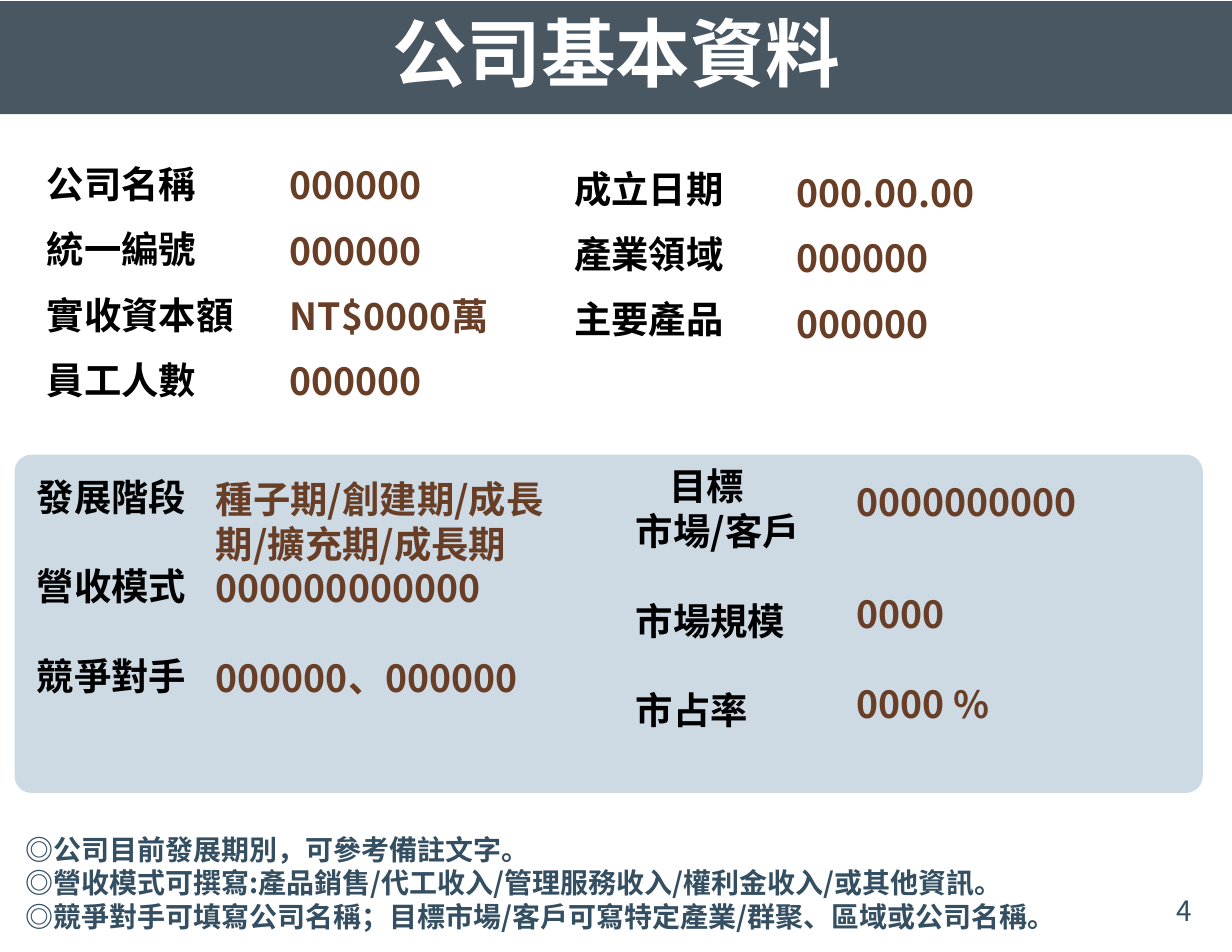
from dataclasses import dataclass

import pptx
import pptx.dml.color
import pptx.enum.shapes
import pptx.enum.text
import pptx.util
from lxml import etree
from pptx.oxml.ns import qn

Inches = pptx.util.Inches
Pt = pptx.util.Pt
RGBColor = pptx.dml.color.RGBColor
PP_ALIGN = pptx.enum.text.PP_ALIGN
MSO_ANCHOR = pptx.enum.text.MSO_ANCHOR

WHITE = RGBColor(0xFF, 0xFF, 0xFF)
BLACK = RGBColor(0x00, 0x00, 0x00)
SLATE = RGBColor(0x49, 0x57, 0x62)
PANEL_BLUE = RGBColor(0x72, 0x97, 0xB4)
BROWN = RGBColor(0x69, 0x3E, 0x26)
NAVY = RGBColor(0x34, 0x4E, 0x62)

FONT = "Noto Sans CJK SC"
NUMBER_FONT = "Noto Sans CJK TC"
BODY_SIZE = 24
LINE_RATIO = 1.2
LIST_GAP = 6.6
ROW_GAP = BODY_SIZE * LINE_RATIO


@dataclass
class Line:
    text: str
    before: float = 0
    after: float = 0
    indent: float = 0


@dataclass
class Column:
    left: float
    top: float
    width: float
    height: float
    color: RGBColor
    lines: list[Line]


def spaced(*texts: str) -> list[Line]:
    return [Line(text, LIST_GAP, LIST_GAP) for text in texts]


def write_text(frame, lines: list[Line], *, size: float = BODY_SIZE,
               color: RGBColor = BLACK, bold: bool = True, font: str = FONT,
               align=PP_ALIGN.LEFT, line_spacing=None) -> None:
    frame.word_wrap = True
    frame.auto_size = pptx.enum.text.MSO_AUTO_SIZE.NONE
    for number, line in enumerate(lines):
        paragraph = frame.paragraphs[0] if number == 0 else frame.add_paragraph()
        paragraph.alignment = align
        paragraph.line_spacing = line_spacing or Pt(size * LINE_RATIO)
        paragraph.space_before = Pt(line.before)
        paragraph.space_after = Pt(line.after)
        if line.indent:
            paragraph._p.get_or_add_pPr().set("marL", str(Inches(line.indent)))
        run = paragraph.add_run()
        run.text = line.text
        run.font.size = Pt(size)
        run.font.bold = bold
        run.font.name = font
        run.font.color.rgb = color
        east_asian = etree.SubElement(run.font._element, qn("a:ea"))
        east_asian.set("typeface", font)


def add_text(slide, left: float, top: float, width: float, height: float,
             lines: list[Line], **text_format) -> None:
    box = slide.shapes.add_textbox(
        Inches(left), Inches(top), Inches(width), Inches(height))
    write_text(box.text_frame, lines, **text_format)


def add_panel(slide) -> None:
    panel = slide.shapes.add_shape(
        pptx.enum.shapes.MSO_SHAPE.ROUNDED_RECTANGLE,
        Inches(0.13), Inches(4.06), Inches(10.61), Inches(3.02))
    panel.adjustments[0] = 0.05
    panel.shadow.inherit = False
    panel.fill.solid()
    panel.fill.fore_color.rgb = PANEL_BLUE
    panel.line.fill.background()
    color = panel._element.spPr.find(qn("a:solidFill"))[0]
    etree.SubElement(color, qn("a:alpha")).set("val", "35000")


def add_title(slide) -> None:
    title = slide.shapes.title
    title.left, title.top = Inches(0), Inches(0.01)
    title.width, title.height = Inches(11), Inches(1.01)
    title.fill.solid()
    title.fill.fore_color.rgb = SLATE
    frame = title.text_frame
    frame.vertical_anchor = MSO_ANCHOR.MIDDLE
    frame.margin_left = frame.margin_right = Inches(0.11)
    frame.margin_top = frame.margin_bottom = Inches(0.06)
    write_text(frame, [Line("公司基本資料")], size=48, color=WHITE,
               align=PP_ALIGN.CENTER, line_spacing=0.9)


COLUMNS = [
    Column(0.32, 1.39, 2.52, 2.31, BLACK,
           spaced("公司名稱", "統一編號", "實收資本額", "員工人數")),
    Column(2.49, 1.4, 2.53, 2.31, BROWN,
           spaced("000000", "000000", "NT$0000萬", "000000")),
    Column(5.03, 1.43, 2.34, 2.31, BLACK,
           spaced("成立日期", "產業領域", "主要產品")),
    Column(7.01, 1.47, 3.57, 1.71, BROWN,
           spaced("000.00.00", "000000", "000000")),
    Column(0.23, 4.18, 1.7, 2.12, BLACK,
           [Line("發展階段"), Line("營收模式", ROW_GAP),
            Line("競爭對手", ROW_GAP)]),
    Column(1.83, 4.2, 3.5, 2.12, BROWN,
           [Line("種子期/創建期/成長期/擴充期/成長期"),
            Line("000000000000"), Line("000000、000000", ROW_GAP)]),
    Column(5.58, 4.09, 1.97, 2.52, BLACK,
           [Line("目標", indent=0.3), Line("市場/客戶"),
            Line("市場規模", ROW_GAP), Line("市占率", ROW_GAP)]),
    Column(7.55, 4.23, 2.92, 2.32, BROWN,
           [Line("0000000000"), Line("0000", 1.5 * ROW_GAP),
            Line("0000 %", ROW_GAP)]),
]

NOTES = [
    Line("◎公司目前發展期別，可參考備註文字。"),
    Line("◎營收模式可撰寫:產品銷售/代工收入/管理服務收入/權利金收入/或其他資訊。"),
    Line("◎競爭對手可填寫公司名稱；目標市場/客戶可寫特定產業/群聚、區域或公司名稱。"),
]


def main() -> None:
    deck = pptx.Presentation()
    deck.slide_width, deck.slide_height = Inches(11), Inches(8.5)
    slide = deck.slides.add_slide(deck.slide_layouts[5])
    add_title(slide)
    add_panel(slide)
    for column in COLUMNS:
        add_text(slide, column.left, column.top, column.width, column.height,
                 column.lines, color=column.color)
    add_text(slide, 0.13, 7.38, 10.39, 1.01, NOTES, size=18, color=NAVY)
    add_text(slide, 8.17, 7.93, 2.57, 0.44, [Line("4")], size=18, color=NAVY,
             bold=False, font=NUMBER_FONT, align=PP_ALIGN.RIGHT)
    deck.save("out.pptx")


if __name__ == "__main__":
    main()
